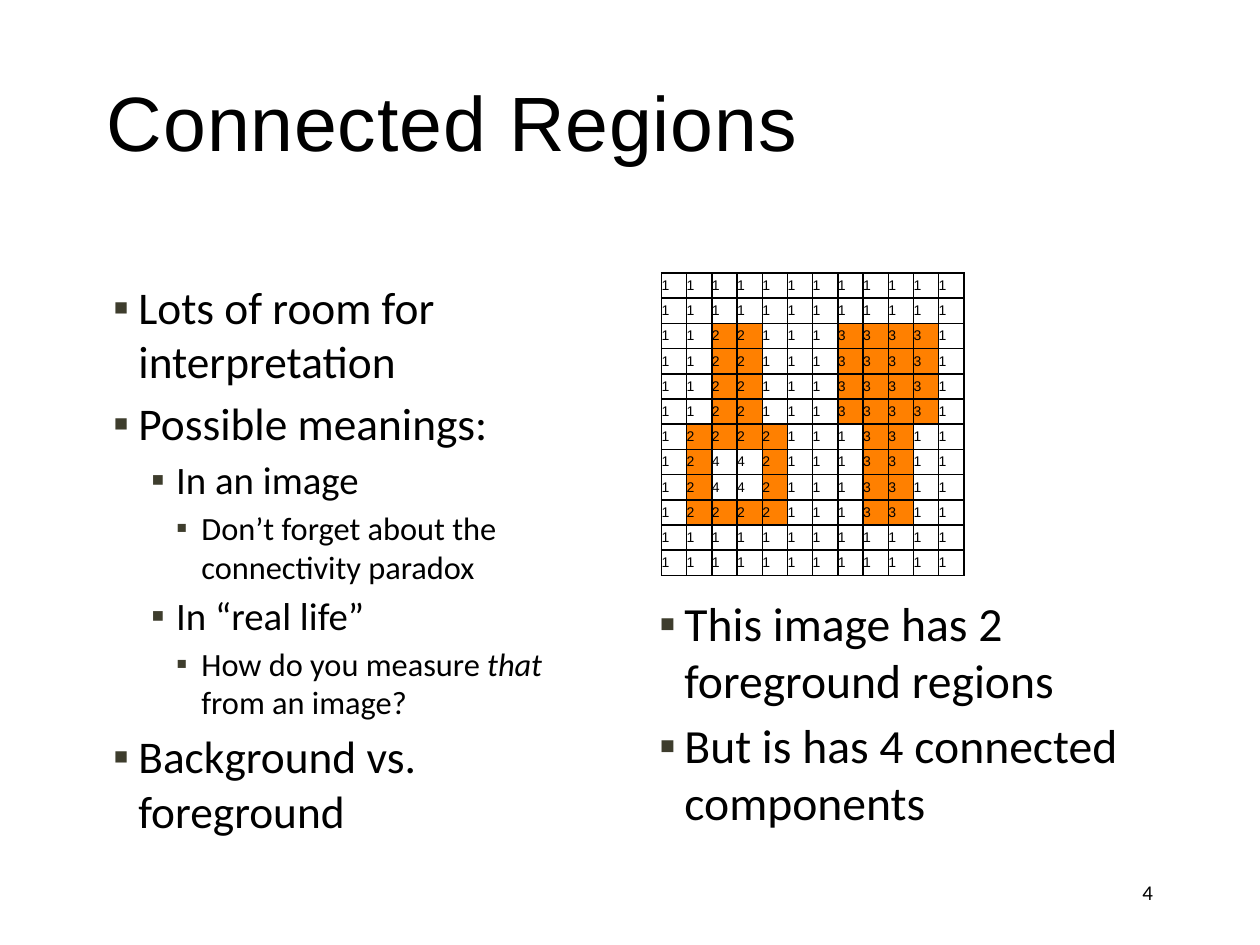
from dataclasses import dataclass

from lxml import etree
from pptx import Presentation
from pptx.dml.color import RGBColor
from pptx.enum.text import MSO_ANCHOR, PP_ALIGN
from pptx.oxml.ns import qn
from pptx.util import Emu, Inches, Pt

TOP, MIDDLE = MSO_ANCHOR.TOP, MSO_ANCHOR.MIDDLE
LEFT, RIGHT = PP_ALIGN.LEFT, PP_ALIGN.RIGHT
BLANK_LAYOUT = 6
GRID_COLUMNS, GRID_ROWS = 120, 90


@dataclass(frozen=True)
class Theme:
    ink: str = "000000"
    bullet: str = "3E3D2D"
    foreground: str = "FF8000"
    background: str = "FFFFFF"
    heading_font: str = "Arial"
    body_font: str = "Calibri"
    title_size: float = 44
    outline_sizes: tuple = (25.9, 22.2, 18.5)
    remark_sizes: tuple = (27.2,)
    number_size: float = 12
    label_size: float = 8
    indents: tuple = (0.25, 0.55, 0.75)
    hanging: float = 0.2
    gap_share: float = 0.16
    border: float = 1


OUTLINE = [
    (0, ["Lots of room for interpretation"]),
    (0, ["Possible meanings:"]),
    (1, ["In an image"]),
    (2, ["Don’t forget about the connectivity paradox"]),
    (1, ["In “real life”"]),
    (2, ["How do you measure ", "that", " from an image?"]),
    (0, ["Background vs. foreground"]),
]
REMARKS = [
    (0, ["This image has 2 foreground regions"]),
    (0, ["But is has 4 connected components"]),
]
REGION_LABELS = (
    ["1" * 12] * 2
    + ["112211133331"] * 4
    + ["122221113311"]
    + ["124421113311"] * 2
    + ["122221113311"]
    + ["1" * 12] * 2
)
FOREGROUND_LABELS = "23"


class Page:
    """Draws on one slide; every area is (column, row, columns, rows) of the grid."""

    def __init__(self, deck, theme):
        self.theme = theme
        self.slide = deck.slides.add_slide(deck.slide_layouts[BLANK_LAYOUT])
        self.column = deck.slide_width / GRID_COLUMNS
        self.row = deck.slide_height / GRID_ROWS

    def place(self, area):
        units = (self.column, self.row) * 2
        return [Emu(round(share * unit)) for share, unit in zip(area, units)]

    def frame(self, area, anchor):
        box = self.slide.shapes.add_textbox(*self.place(area))
        box.text_frame.word_wrap = True
        box.text_frame.vertical_anchor = anchor
        return box.text_frame

    def style(self, para, font, size):
        para.font.name = font
        para.font.size = Pt(size)
        para.font.color.rgb = RGBColor.from_string(self.theme.ink)

    def line(self, text, area, font, size, align=LEFT, tracking=0):
        para = self.frame(area, MIDDLE).paragraphs[0]
        para.alignment = align
        self.style(para, font, size)
        span = para.add_run()
        span.text = text
        if tracking:
            span._r.get_or_add_rPr().set("spc", str(round(tracking * 100)))

    def add_bullet(self, para, level):
        properties = para._p.get_or_add_pPr()
        properties.set("marL", str(Inches(self.theme.indents[level])))
        properties.set("indent", str(-Inches(self.theme.hanging)))
        colour = etree.SubElement(properties, qn("a:buClr"))
        etree.SubElement(colour, qn("a:srgbClr"), val=self.theme.bullet)
        etree.SubElement(properties, qn("a:buFont"), typeface=self.theme.heading_font)
        etree.SubElement(properties, qn("a:buChar"), char="▪")

    def bullets(self, items, area, sizes):
        """Each item is a level and its spans; every second span is italic."""
        frame = self.frame(area, TOP)
        for index, (level, texts) in enumerate(items):
            para = frame.add_paragraph() if index else frame.paragraphs[0]
            para.level = level
            self.add_bullet(para, level)
            if index:
                para.space_before = Pt(round(sizes[level] * self.theme.gap_share, 1))
            self.style(para, self.theme.body_font, sizes[level])
            for position, text in enumerate(texts):
                span = para.add_run()
                span.text = text
                if position % 2:
                    span.font.italic = True

    def add_borders(self, cell):
        properties = cell._tc.get_or_add_tcPr()
        for side in ("lnL", "lnR", "lnT", "lnB"):
            edge = etree.SubElement(
                properties, qn(f"a:{side}"), w=str(Pt(self.theme.border))
            )
            fill = etree.SubElement(edge, qn("a:solidFill"))
            etree.SubElement(fill, qn("a:srgbClr"), val=self.theme.ink)

    def label_grid(self, rows, area):
        theme = self.theme
        table = self.slide.shapes.add_table(
            len(rows), len(rows[0]), *self.place(area)
        ).table
        table.first_row = table.horz_banding = False
        for row_index, labels in enumerate(rows):
            for column_index, label in enumerate(labels):
                cell = table.cell(row_index, column_index)
                cell.margin_left = cell.margin_right = 0
                cell.margin_top = cell.margin_bottom = 0
                cell.vertical_anchor = MIDDLE
                self.add_borders(cell)
                inside = label in FOREGROUND_LABELS
                colour = theme.foreground if inside else theme.background
                cell.fill.solid()
                cell.fill.fore_color.rgb = RGBColor.from_string(colour)
                cell.text = label
                para = cell.text_frame.paragraphs[0]
                self.style(para, theme.heading_font, theme.label_size)


def main():
    deck = Presentation()
    deck.slide_width, deck.slide_height = Inches(10), Inches(7.5)
    theme = Theme()
    page = Page(deck, theme)
    page.line("Connected Regions", (9, 4, 102, 15), theme.heading_font,
              theme.title_size, tracking=0.5)
    page.bullets(OUTLINE, (9, 26, 50, 54), theme.outline_sizes)
    page.label_grid(REGION_LABELS, (63, 26, 28.8, 28.8))
    page.bullets(REMARKS, (61, 56, 50, 24), theme.remark_sizes)
    page.line("4", (86, 82, 25, 6), theme.body_font, theme.number_size, align=RIGHT)
    deck.save("out.pptx")


if __name__ == "__main__":
    main()
